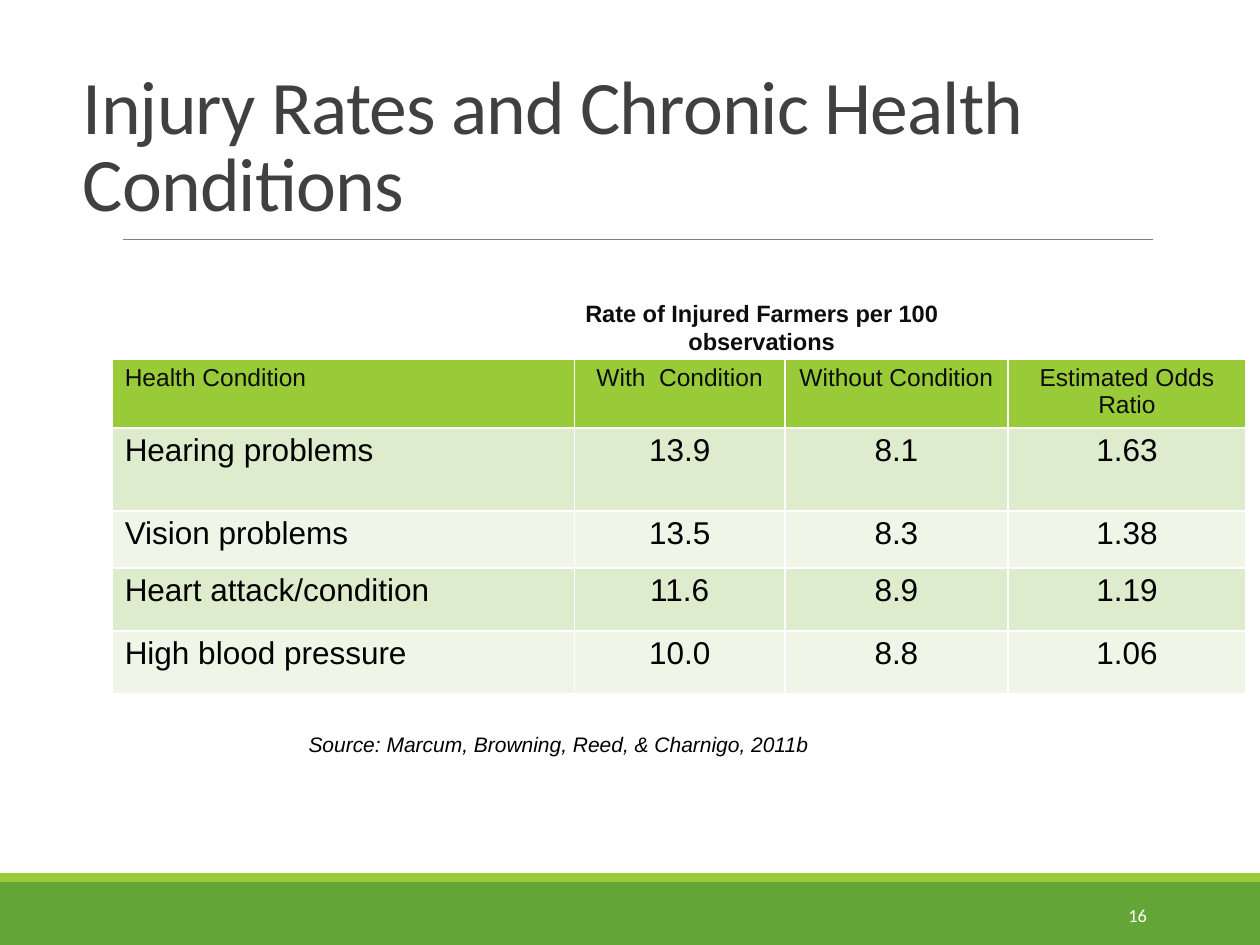
from lxml import etree
from pptx import Presentation
from pptx.dml.color import RGBColor
from pptx.enum.shapes import MSO_CONNECTOR, MSO_SHAPE
from pptx.enum.text import MSO_ANCHOR, PP_ALIGN
from pptx.oxml import parse_xml
from pptx.oxml.ns import nsdecls, qn
from pptx.util import Inches, Pt

COLORS = {
    "green": "63A537",
    "lime": "99CB38",
    "band": "DEECCE",
    "pale": "EFF6E8",
    "rule": "808080",
    "title": "404040",
    "ink": "0D0D0D",
    "black": "000000",
    "white": "FFFFFF",
}

HEAD = ["Health Condition", "With  Condition", "Without Condition",
        "Estimated Odds Ratio"]
ROWS = [
    ["Hearing problems", "13.9", "8.1", "1.63"],
    ["Vision problems", "13.5", "8.3", "1.38"],
    ["Heart attack/condition", "11.6", "8.9", "1.19"],
    ["High blood pressure", "10.0", "8.8", "1.06"],
]
WIDTHS = [3.67, 1.67, 1.77, 1.89]
HEIGHTS = [0.52, 0.66, 0.45, 0.5, 0.5]


def color(name):
    return RGBColor.from_string(COLORS[name])


def write(frame, text, size, ink="black", face="Arial", bold=False,
          italic=False, align=PP_ALIGN.LEFT, lead=None, after=None, track=None):
    """Fill a text frame with one paragraph; track is in points."""
    para = frame.paragraphs[0]
    para.alignment = align
    if lead is not None:
        para.line_spacing = lead
    if after is not None:
        para.space_after = Pt(after)
    run = para.add_run()
    run.text = text
    font = run.font
    font.name, font.size = face, Pt(size)
    font.bold, font.italic = bold, italic
    font.color.rgb = color(ink)
    if track is not None:
        font._element.set("spc", str(round(track * 100)))


def edge(cell, ink="white", width=1):
    """Draw all four borders of a cell; they must precede its fill."""
    props = cell._tc.get_or_add_tcPr()
    for spot, side in enumerate(("lnL", "lnR", "lnT", "lnB")):
        props.insert(spot, parse_xml(
            f'<a:{side} {nsdecls("a")} w="{Pt(width)}"><a:solidFill>'
            f'<a:srgbClr val="{COLORS[ink]}"/></a:solidFill></a:{side}>'))


class Deck:
    """Holds the presentation and its current slide."""

    def __init__(self, width, height):
        self.prs = Presentation()
        self.prs.slide_width = Inches(width)
        self.prs.slide_height = Inches(height)
        self.slide = self.prs.slides.add_slide(self.prs.slide_layouts[6])
        self.shapes = self.slide.shapes

    def bar(self, box, fill):
        shape = self.shapes.add_shape(MSO_SHAPE.RECTANGLE, *map(Inches, box))
        shape.shadow.inherit = False
        shape.fill.solid()
        shape.fill.fore_color.rgb = color(fill)
        shape.line.fill.background()

    def line(self, ends, ink, width):
        rule = self.shapes.add_connector(
            MSO_CONNECTOR.STRAIGHT, *map(Inches, ends))
        rule.line.color.rgb = color(ink)
        rule.line.width = Pt(width)
        etree.SubElement(rule._element.spPr, qn("a:effectLst"))

    def text(self, box, words, size, anchor=MSO_ANCHOR.TOP, **style):
        frame = self.shapes.add_textbox(*map(Inches, box)).text_frame
        frame.word_wrap = True
        frame.vertical_anchor = anchor
        write(frame, words, size, **style)

    def table(self, left, top, head, rows, widths, heights):
        data = [head] + rows
        table = self.shapes.add_table(
            len(data), len(head), Inches(left), Inches(top),
            Inches(sum(widths)), Inches(sum(heights))).table
        for col, width in zip(table.columns, widths):
            col.width = Inches(width)
        for r, (items, height) in enumerate(zip(data, heights)):
            table.rows[r].height = Inches(height)
            fill = "lime" if r == 0 else "band" if r % 2 else "pale"
            size, ink = (14, "ink") if r == 0 else (18, "black")
            for c, item in enumerate(items):
                cell = table.cell(r, c)
                cell.margin_top = cell.margin_bottom = Inches(0.04)
                cell.fill.solid()
                cell.fill.fore_color.rgb = color(fill)
                edge(cell)
                write(cell.text_frame, item, size, ink=ink,
                      align=PP_ALIGN.CENTER if c else PP_ALIGN.LEFT)

    def save(self):
        self.prs.save("out.pptx")


def main():
    deck = Deck(10, 7.5)
    deck.bar((0, 7, 10, 0.5), "green")
    deck.bar((0, 6.93, 10, 0.07), "lime")
    deck.line((0.98, 1.9, 9.15, 1.9), "rule", 0.5)
    deck.text((0.56, 0.96, 8.83, 0.89),
              "Injury Rates and Chronic Health Conditions", 43.2,
              anchor=MSO_ANCHOR.BOTTOM, ink="title", face="Calibri",
              lead=0.85, track=-0.5)
    deck.table(0.89, 2.85, HEAD, ROWS, WIDTHS, HEIGHTS)
    deck.text((4.42, 2.32, 3.25, 0.56),
              "Rate of Injured Farmers per 100 observations", 13.5,
              ink="ink", bold=True, align=PP_ALIGN.CENTER)
    deck.text((2.35, 5.76, 7.38, 0.3),
              "Source: Marcum, Browning, Reed, & Charnigo, 2011b", 12,
              italic=True, after=4.5)
    deck.text((8.12, 7.06, 1.08, 0.4), "16", 10.5, anchor=MSO_ANCHOR.MIDDLE,
              ink="white", face="Calibri", align=PP_ALIGN.RIGHT)
    deck.save()


if __name__ == "__main__":
    main()
